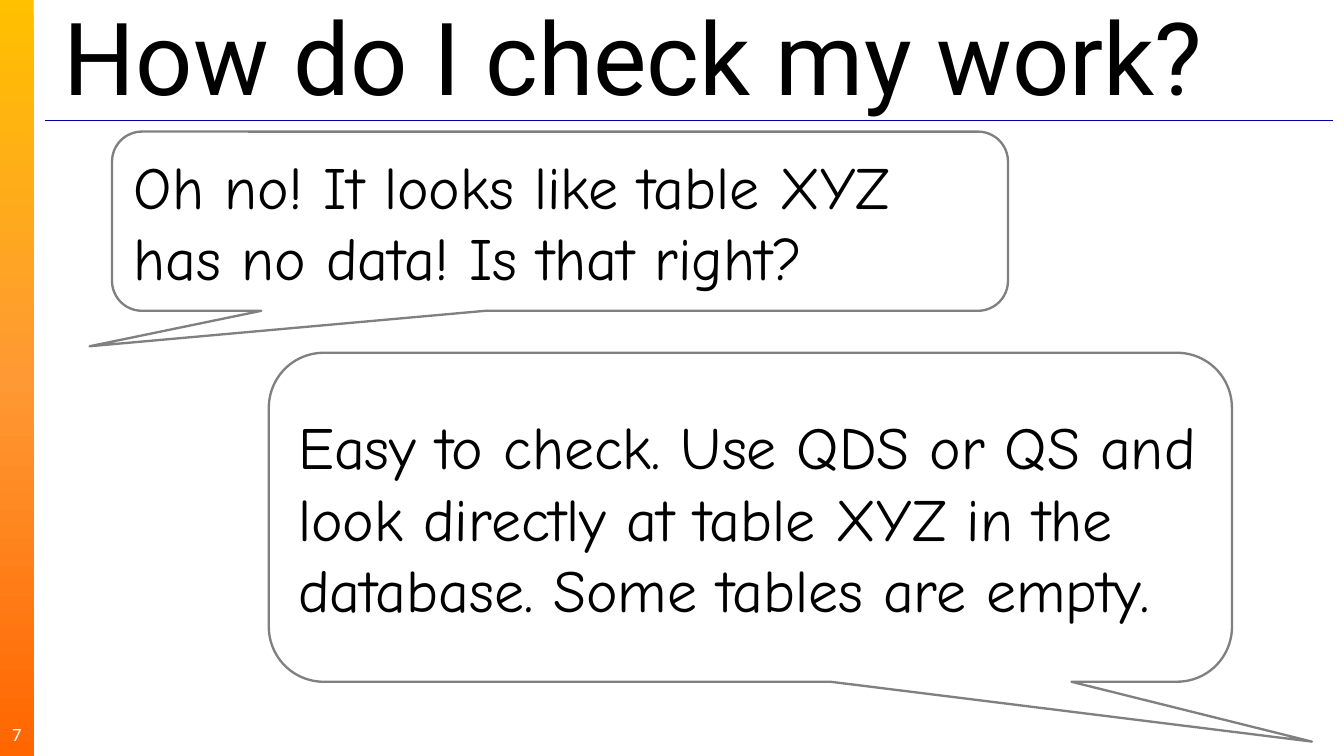
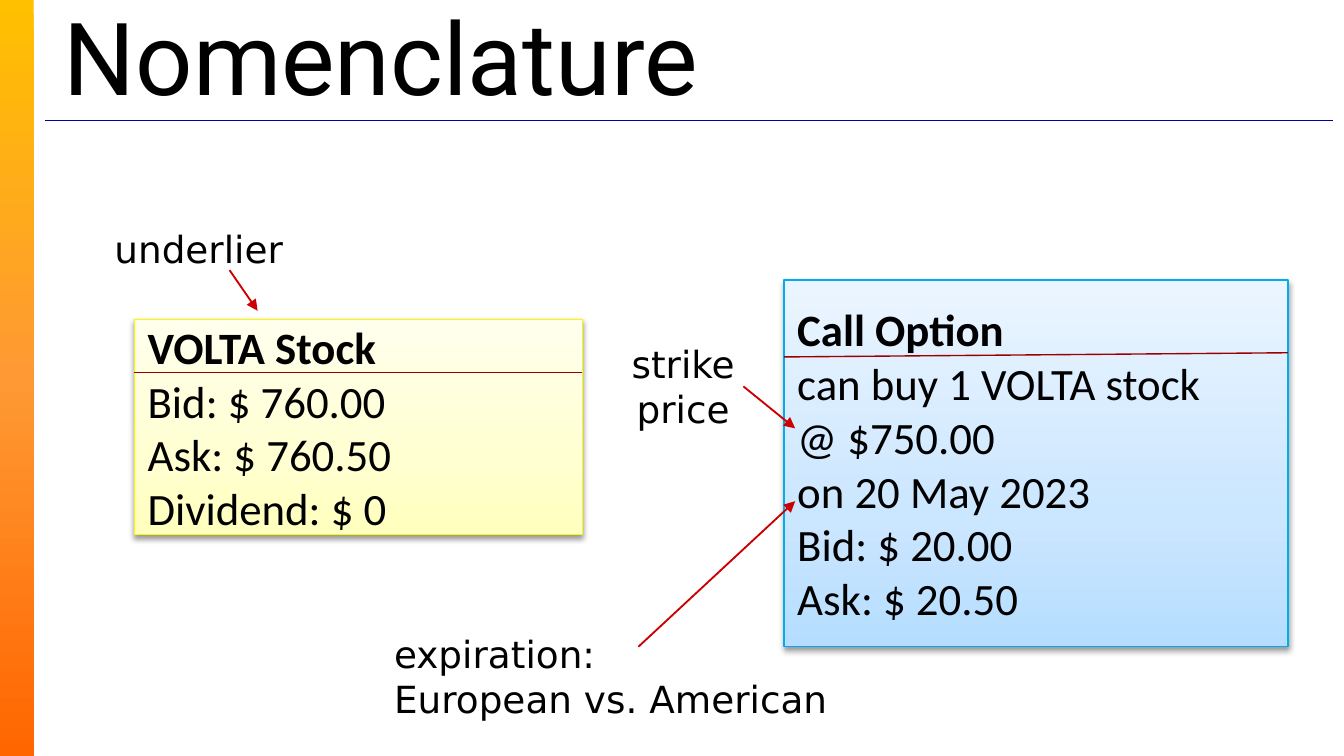
"""Build two lesson slides: checking work in a database, and option nomenclature."""
from dataclasses import dataclass

from lxml import etree
from pptx import Presentation
from pptx.dml.color import RGBColor
from pptx.enum.shapes import MSO_CONNECTOR, MSO_SHAPE
from pptx.enum.text import MSO_ANCHOR, MSO_AUTO_SIZE, PP_ALIGN
from pptx.oxml.ns import qn
from pptx.util import Pt

RECTANGLE = MSO_SHAPE.RECTANGLE
CALLOUT = MSO_SHAPE.ROUNDED_RECTANGULAR_CALLOUT
STRAIGHT = MSO_CONNECTOR.STRAIGHT
LEFT, CENTER = PP_ALIGN.LEFT, PP_ALIGN.CENTER
TOP, MIDDLE = MSO_ANCHOR.TOP, MSO_ANCHOR.MIDDLE
FIXED, GROW = MSO_AUTO_SIZE.NONE, MSO_AUTO_SIZE.SHAPE_TO_FIT_TEXT

EMU_PER_PX = 9525
SLIDE_WIDTH, SLIDE_HEIGHT = 960, 540
BAND_WIDTH = 24
TITLE_ONLY = 5
DOWNWARD, UPWARD = 270, 90

BLACK = RGBColor(0x00, 0x00, 0x00)
WHITE = RGBColor(0xFF, 0xFF, 0xFF)
GRAY = RGBColor(0x80, 0x80, 0x80)
NAVY = RGBColor(0x00, 0x00, 0xA5)
RED = RGBColor(0xCC, 0x00, 0x00)
DARK_RED = RGBColor(0x9A, 0x00, 0x00)
YELLOW = RGBColor(0xF9, 0xF9, 0x00)
CYAN = RGBColor(0x00, 0xAC, 0xEB)


@dataclass(frozen=True)
class Stop:
    percent: int
    color: RGBColor


BAND_STOPS = (
    Stop(0, RGBColor(0xFF, 0xC0, 0x00)),
    Stop(50, RGBColor(0xFF, 0x99, 0x33)),
    Stop(100, RGBColor(0xFF, 0x66, 0x00)),
)
YELLOW_STOPS = (
    Stop(0, RGBColor(0xFF, 0xFF, 0xBD)),
    Stop(35, RGBColor(0xFF, 0xFF, 0xD1)),
    Stop(100, RGBColor(0xFF, 0xFF, 0xEE)),
)
BLUE_STOPS = (
    Stop(0, RGBColor(0xB5, 0xDD, 0xFF)),
    Stop(35, RGBColor(0xCB, 0xE6, 0xFF)),
    Stop(100, RGBColor(0xEB, 0xF5, 0xFF)),
)


@dataclass(frozen=True)
class Box:
    left: int
    top: int
    width: int
    height: int

    def emu(self) -> tuple[int, ...]:
        return tuple(px(n) for n in (self.left, self.top, self.width, self.height))


@dataclass(frozen=True)
class TextStyle:
    font: str
    size: int
    color: RGBColor = BLACK
    alignment: PP_ALIGN = LEFT
    anchor: MSO_ANCHOR = MIDDLE
    wrap: bool = True
    auto_size: MSO_AUTO_SIZE = FIXED


@dataclass(frozen=True)
class Bubble:
    box: Box
    tail: tuple[float, float]
    text: str


@dataclass(frozen=True)
class Card:
    box: Box
    stops: tuple[Stop, ...]
    outline: RGBColor
    text: str


@dataclass(frozen=True)
class Label:
    box: Box
    text: str
    alignment: PP_ALIGN
    wrap: bool


@dataclass(frozen=True)
class Line:
    start: tuple[int, int]
    end: tuple[int, int]
    color: RGBColor
    weight: float = 0.75
    arrow: bool = False


TITLE_BOX = Box(36, 14, 920, 51)
TITLE_STYLE = TextStyle("Roboto", 54)
NUMBER_STYLE = TextStyle("Calibri", 10, WHITE, CENTER)
BUBBLE_STYLE = TextStyle("Comic Neue", 32)
CARD_STYLE = TextStyle("Calibri", 24, wrap=False)
TITLE_RULE = Line((32, 86), (952, 86), NAVY)

BUBBLES = (
    Bubble(Box(80, 94, 640, 128), (-0.525, 0.698),
           "Oh no! It looks like table XYZ has no data! Is that right?"),
    Bubble(Box(192, 252, 688, 235), (0.583, 0.682),
           "Easy to check. Use QDS or QS and look directly at table XYZ "
           "in the database. Some tables are empty."),
)
CARDS = (
    Card(Box(96, 228, 320, 154), YELLOW_STOPS, YELLOW,
         "VOLTA Stock\nBid: $ 760.00\vAsk: $ 760.50\nDividend: $ 0"),
    Card(Box(560, 200, 360, 262), BLUE_STOPS, CYAN,
         "Call Option\ncan buy 1 VOLTA stock\v@ $750.00\non 20 May 2023\n"
         "Bid: $ 20.00\nAsk: $ 20.50"),
)
LABELS = (
    Label(Box(72, 157, 140, 42), "underlier", CENTER, False),
    Label(Box(436, 239, 104, 74), "strike price", CENTER, True),
    Label(Box(272, 446, 329, 74), "expiration:\vEuropean vs. American", LEFT, False),
)
LINES = (
    Line((164, 193), (184, 222), RED, 1, True),
    Line((531, 276), (568, 306), RED, 1, True),
    Line((456, 462), (568, 358), RED, 1, True),
    Line((96, 266), (416, 266), DARK_RED),
    Line((560, 255), (920, 252), DARK_RED),
)


def px(length: int) -> int:
    """Turn px into EMU."""
    return length * EMU_PER_PX


def write_text(shape, text: str, style: TextStyle) -> None:
    """Put styled text into a shape."""
    text_frame = shape.text_frame
    text_frame.text = text
    text_frame.word_wrap = style.wrap
    text_frame.auto_size = style.auto_size
    text_frame.vertical_anchor = style.anchor
    for paragraph in text_frame.paragraphs:
        paragraph.alignment = style.alignment
        for run in paragraph.runs:
            run.font.name = style.font
            run.font.size = Pt(style.size)
            run.font.color.rgb = style.color


def fill_gradient(shape, stops: tuple[Stop, ...], angle: int) -> None:
    """Fill a shape with a linear gradient."""
    shape.fill.gradient()
    shape.fill.gradient_angle = angle
    stop_list = shape._element.spPr.find(qn("a:gradFill")).find(qn("a:gsLst"))
    stop_list.clear()
    for stop in stops:
        entry = etree.SubElement(stop_list, qn("a:gs"), pos=str(stop.percent * 1000))
        etree.SubElement(entry, qn("a:srgbClr"), val=str(stop.color))


def add_soft_shadow(shape) -> None:
    """Give a shape a soft shadow below it."""
    effects = shape._element.spPr.find(qn("a:effectLst"))
    shadow = etree.SubElement(effects, qn("a:outerShdw"), blurRad=str(Pt(3.1)),
                              dist=str(Pt(1.6)), dir="5400000", rotWithShape="0")
    color = etree.SubElement(shadow, qn("a:srgbClr"), val=str(BLACK))
    etree.SubElement(color, qn("a:alpha"), val="38000")


def add_line(slide, line: Line) -> None:
    """Draw a rule or an arrow."""
    points = (px(n) for n in (*line.start, *line.end))
    connector = slide.shapes.add_connector(STRAIGHT, *points)
    connector.line.color.rgb = line.color
    connector.line.width = Pt(line.weight)
    properties = connector._element.spPr
    if line.arrow:
        etree.SubElement(properties.find(qn("a:ln")), qn("a:tailEnd"), type="triangle")
    etree.SubElement(properties, qn("a:effectLst"))


def add_bubble(slide, bubble: Bubble) -> None:
    """Draw a speech bubble."""
    shape = slide.shapes.add_shape(CALLOUT, *bubble.box.emu())
    shape.shadow.inherit = False
    for index, value in enumerate((*bubble.tail, 0.167)):
        shape.adjustments[index] = value
    shape.fill.solid()
    shape.fill.fore_color.rgb = WHITE
    shape.line.color.rgb = GRAY
    shape.line.width = Pt(1.25)
    write_text(shape, bubble.text, BUBBLE_STYLE)


def add_card(slide, card: Card) -> None:
    """Draw a quote card with a bold heading."""
    shape = slide.shapes.add_shape(RECTANGLE, *card.box.emu())
    shape.shadow.inherit = False
    add_soft_shadow(shape)
    fill_gradient(shape, card.stops, UPWARD)
    shape.line.color.rgb = card.outline
    shape.line.width = Pt(0.75)
    write_text(shape, card.text, CARD_STYLE)
    shape.text_frame.paragraphs[0].runs[0].font.bold = True


def add_label(slide, label: Label) -> None:
    """Write a label beside a card."""
    shape = slide.shapes.add_textbox(*label.box.emu())
    style = TextStyle("DejaVu Sans", 20, BLACK, label.alignment, TOP, label.wrap, GROW)
    write_text(shape, label.text, style)


def add_page_number(slide, number: str) -> None:
    """Write the page number at the foot of the band."""
    shape = slide.shapes.add_textbox(*Box(0, 510, BAND_WIDTH, 29).emu())
    text_frame = shape.text_frame
    text_frame.margin_left = text_frame.margin_right = 0
    text_frame.margin_top = text_frame.margin_bottom = 0
    write_text(shape, number, NUMBER_STYLE)


def add_titled_slide(presentation, title: str):
    """Add a slide with the shared band, rule and title."""
    slide = presentation.slides.add_slide(presentation.slide_layouts[TITLE_ONLY])
    band = slide.shapes.add_shape(RECTANGLE, *Box(0, 0, BAND_WIDTH, SLIDE_HEIGHT).emu())
    band.shadow.inherit = False
    fill_gradient(band, BAND_STOPS, DOWNWARD)
    band.line.fill.background()
    add_line(slide, TITLE_RULE)
    placeholder = slide.shapes.title
    placeholder.left, placeholder.top, placeholder.width, placeholder.height = TITLE_BOX.emu()
    write_text(placeholder, title, TITLE_STYLE)
    return slide


def main() -> None:
    """Build and save the slides."""
    presentation = Presentation()
    presentation.slide_width = px(SLIDE_WIDTH)
    presentation.slide_height = px(SLIDE_HEIGHT)

    check_slide = add_titled_slide(presentation, "How do I check my work?")
    add_page_number(check_slide, "7")
    for bubble in BUBBLES:
        add_bubble(check_slide, bubble)

    nomenclature_slide = add_titled_slide(presentation, "Nomenclature")
    for card in CARDS:
        add_card(nomenclature_slide, card)
    for label in LABELS:
        add_label(nomenclature_slide, label)
    for line in LINES:
        add_line(nomenclature_slide, line)

    presentation.save("out.pptx")


if __name__ == "__main__":
    main()
